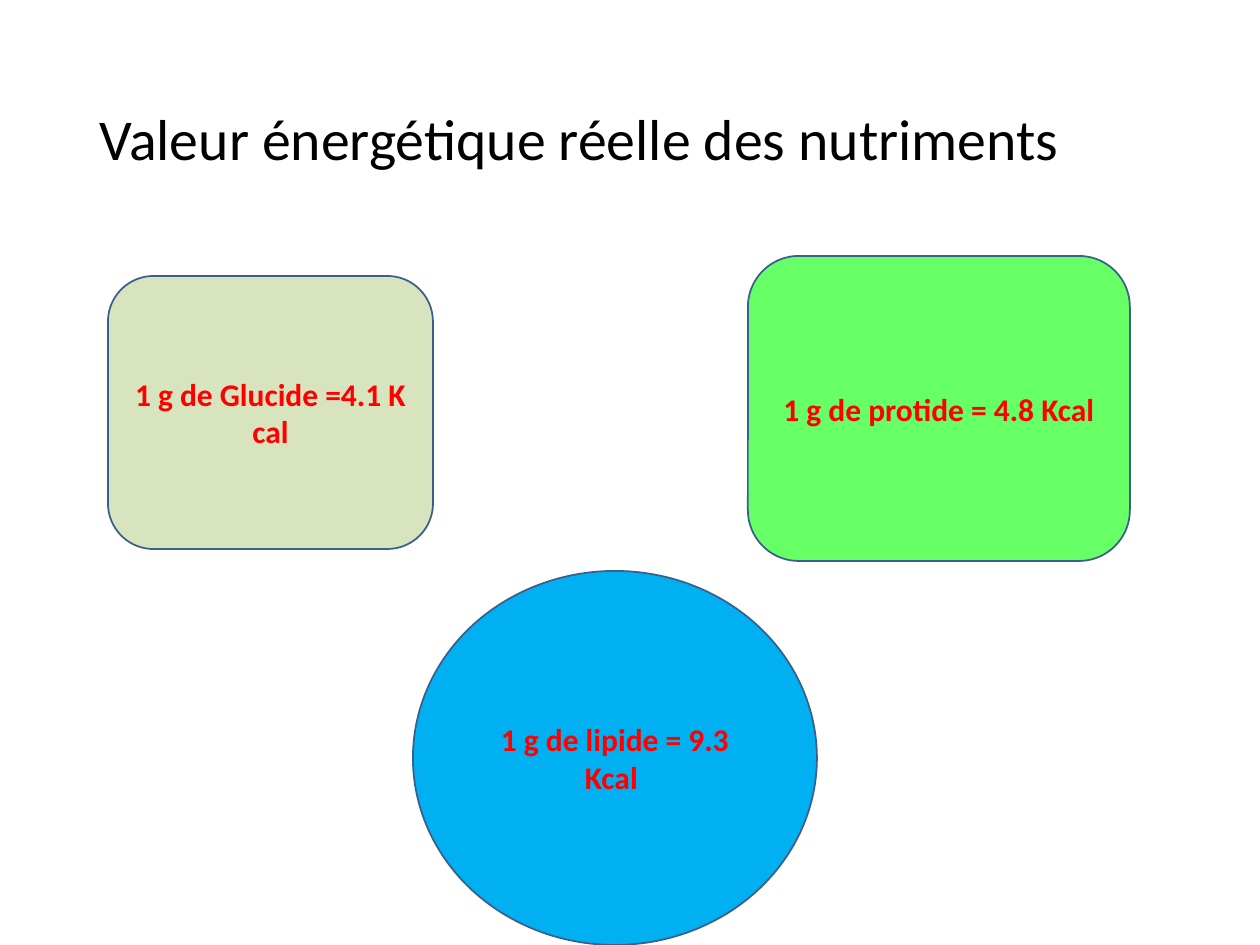
"""Build a slide on the real energy value of nutrients."""
from dataclasses import dataclass

from pptx import Presentation
from pptx import util as u
from pptx.dml.color import RGBColor
from pptx.enum import shapes, text

PX = u.Inches(1) // 126
ROUNDED = shapes.MSO_SHAPE.ROUNDED_RECTANGLE
OVAL = shapes.MSO_SHAPE.OVAL

TITLE = "Valeur énergétique réelle des nutriments"
TITLE_AREA = (87, 50, 1086, 183)
NUTRIENTS = [
    ("1 g de Glucide =4.1 K cal", ROUNDED, "D7E4BD", (108, 276, 325, 273)),
    ("1 g de protide = 4.8 Kcal", ROUNDED, "66FF66", (748, 256, 382, 305)),
    ("1 g de lipide = 9.3 Kcal ", OVAL, "00B0F0", (413, 571, 404, 374)),
]


@dataclass(frozen=True)
class Theme:
    font: str = "Calibri"
    title_color: str = "000000"
    label_color: str = "FF0000"
    outline: str = "3A5F8C"
    title_size: int = 33
    label_size: int = 18
    outline_width: int = 1


THEME = Theme()


def scaled(area):
    return [value * PX for value in area]


def write(shape, words, size, color, align, bold=False):
    frame = shape.text_frame
    frame.text = words
    frame.word_wrap = True
    frame.vertical_anchor = text.MSO_ANCHOR.MIDDLE
    para = frame.paragraphs[0]
    para.alignment = align
    para.font.name = THEME.font
    para.font.size = u.Pt(size)
    para.font.bold = bold
    para.font.color.rgb = RGBColor.from_string(color)
    return para


def add_title(page):
    title = page.shapes.title
    title.left, title.top, title.width, title.height = scaled(TITLE_AREA)
    para = write(title, TITLE, THEME.title_size, THEME.title_color, text.PP_ALIGN.LEFT)
    para.line_spacing = 0.9


def add_nutrient(page, label, kind, fill, area):
    box = page.shapes.add_shape(kind, *scaled(area))
    box.shadow.inherit = False
    box.fill.solid()
    box.fill.fore_color.rgb = RGBColor.from_string(fill)
    box.line.color.rgb = RGBColor.from_string(THEME.outline)
    box.line.width = u.Pt(THEME.outline_width)
    write(box, label, THEME.label_size, THEME.label_color, text.PP_ALIGN.CENTER, bold=True)


def main():
    deck = Presentation()
    deck.slide_width, deck.slide_height = u.Inches(10), u.Inches(7.5)
    page = deck.slides.add_slide(deck.slide_layouts[5])
    add_title(page)
    for nutrient in NUTRIENTS:
        add_nutrient(page, *nutrient)
    deck.save("out.pptx")


if __name__ == "__main__":
    main()
